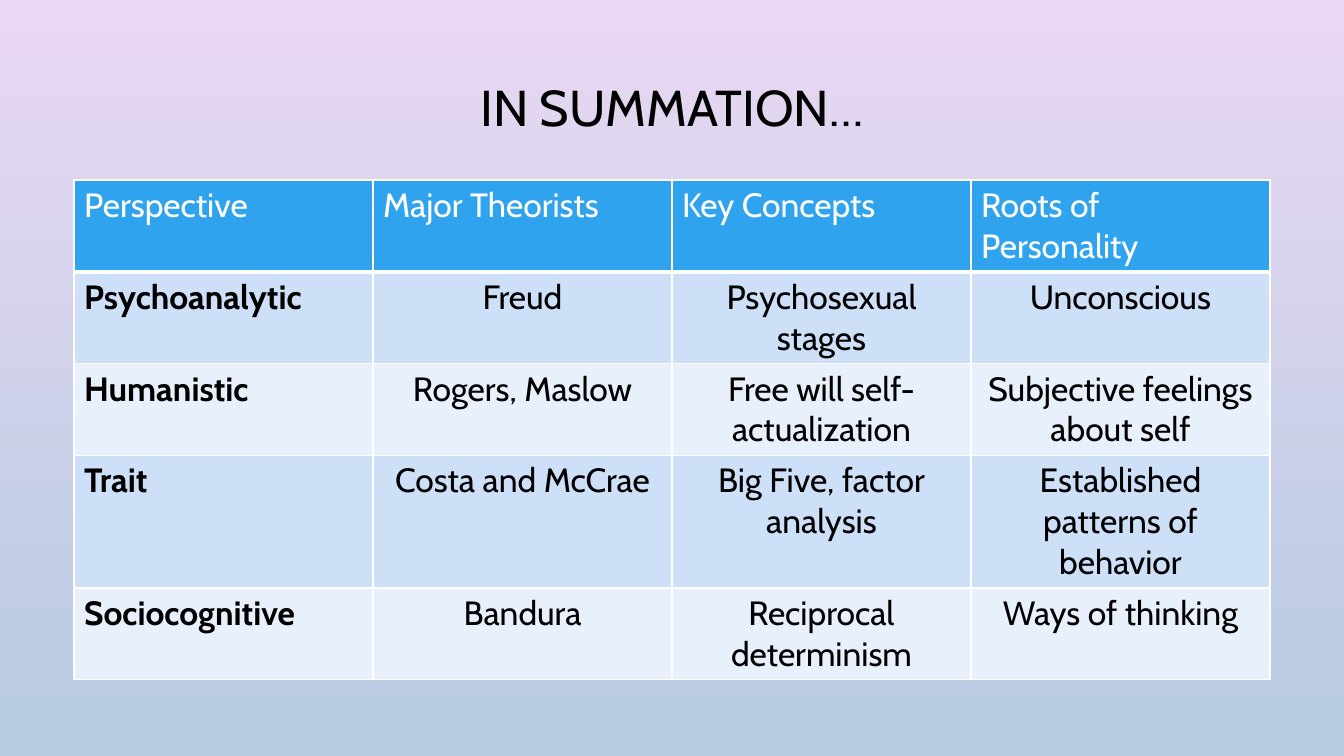
from dataclasses import dataclass

from lxml.etree import SubElement
from pptx import Presentation
from pptx.dml.color import RGBColor as Rgb
from pptx.enum.text import MSO_ANCHOR as Anchor, PP_ALIGN as Align
from pptx.oxml.ns import qn
from pptx.util import Emu, Pt

EMU_PER_PX = 914400 / 100.8
SLIDE_SIZE = (1344, 756)
TITLE_BOX = (101, 69, 1142, 83)
TABLE_BOX = (74, 180, 1196)
ROW_HEIGHTS = (91, 91, 91, 132, 91)

PERSPECTIVES = (
    ("Perspective", "Major Theorists", "Key Concepts", "Roots of Personality"),
    ("Psychoanalytic", "Freud", "Psychosexual stages", "Unconscious"),
    ("Humanistic", "Rogers, Maslow", "Free will self-actualization",
     "Subjective feelings about self"),
    ("Trait", "Costa and McCrae", "Big Five, factor analysis",
     "Established patterns of behavior"),
    ("Sociocognitive", "Bandura", "Reciprocal determinism", "Ways of thinking"),
)


@dataclass(frozen=True)
class Theme:
    """Colours, font and sizes of the slide."""
    sky: tuple = ("E9D8F3", "B6CAE2")
    header: str = "2FA3EE"
    bands: tuple = ("CDE0F8", "E8F0FC")
    ink: str = "000000"
    light: str = "FFFFFF"
    font: str = "Cabin"
    title_size: int = 36
    body_size: int = 24
    rule: int = 1
    header_rule: int = 3


THEME = Theme()


def px(length):
    """Turn pixels into EMU."""
    return Emu(round(length * EMU_PER_PX))


def assign(target, values):
    """Set attributes from a dict."""
    for name, value in values.items():
        setattr(target, name, value)


def style_text(paragraph, size, color, align, bold=False):
    """Format a paragraph and its runs."""
    paragraph.alignment = align
    for run in paragraph.runs:
        assign(run.font, {"name": THEME.font, "size": Pt(size), "bold": bold})
        run.font.color.rgb = Rgb.from_string(color)


def rule_cell(cell, bottom):
    """Draw the four borders of a cell."""
    properties = cell._tc.get_or_add_tcPr()
    for side in "LRTB":
        width = bottom if side == "B" else THEME.rule
        line = SubElement(properties, qn(f"a:ln{side}"), w=str(Pt(width)))
        fill = SubElement(line, qn("a:solidFill"))
        SubElement(fill, qn("a:srgbClr"), val=THEME.light)


def paint_background(slide):
    """Fill the slide with a downward gradient."""
    fill = slide.background.fill
    fill.gradient()
    fill.gradient_angle = 270
    for stop, color in zip(fill.gradient_stops, THEME.sky):
        stop.color.rgb = Rgb.from_string(color)


def place_title(slide, box, wording):
    """Place and format the title."""
    title = slide.shapes.title
    assign(title, dict(zip(("left", "top", "width", "height"), map(px, box))))
    frame = title.text_frame
    frame.text = wording
    assign(frame, {"vertical_anchor": Anchor.MIDDLE, "word_wrap": True})
    heading = frame.paragraphs[0]
    heading.line_spacing = 0.9
    style_text(heading, THEME.title_size, THEME.ink, Align.CENTER)


def fill_cell(cell, wording, row, column):
    """Write a cell and style it by its place."""
    is_header = row == 0
    is_label = column == 0
    cell.text = wording
    rule_cell(cell, THEME.header_rule if is_header else THEME.rule)
    cell.fill.solid()
    shade = THEME.header if is_header else THEME.bands[(row - 1) % 2]
    cell.fill.fore_color.rgb = Rgb.from_string(shade)
    style_text(
        cell.text_frame.paragraphs[0],
        THEME.body_size,
        THEME.light if is_header else THEME.ink,
        Align.LEFT if is_header or is_label else Align.CENTER,
        bold=is_label and not is_header,
    )


def place_table(slide, box, entries):
    """Place the table of perspectives with equal columns."""
    left, top, width = box
    column_count = len(entries[0])
    table = slide.shapes.add_table(
        len(entries), column_count,
        px(left), px(top), px(width), px(sum(ROW_HEIGHTS)),
    ).table
    for column in table.columns:
        column.width = px(width // column_count)
    for row, height in zip(table.rows, ROW_HEIGHTS):
        row.height = px(height)
    for row, wordings in enumerate(entries):
        for column, wording in enumerate(wordings):
            fill_cell(table.cell(row, column), wording, row, column)


def main():
    """Build and save the slide."""
    deck = Presentation()
    deck.slide_width, deck.slide_height = map(px, SLIDE_SIZE)
    slide = deck.slides.add_slide(deck.slide_layouts[5])
    paint_background(slide)
    place_title(slide, TITLE_BOX, "IN SUMMATION…")
    place_table(slide, TABLE_BOX, PERSPECTIVES)
    deck.save("out.pptx")


if __name__ == "__main__":
    main()
